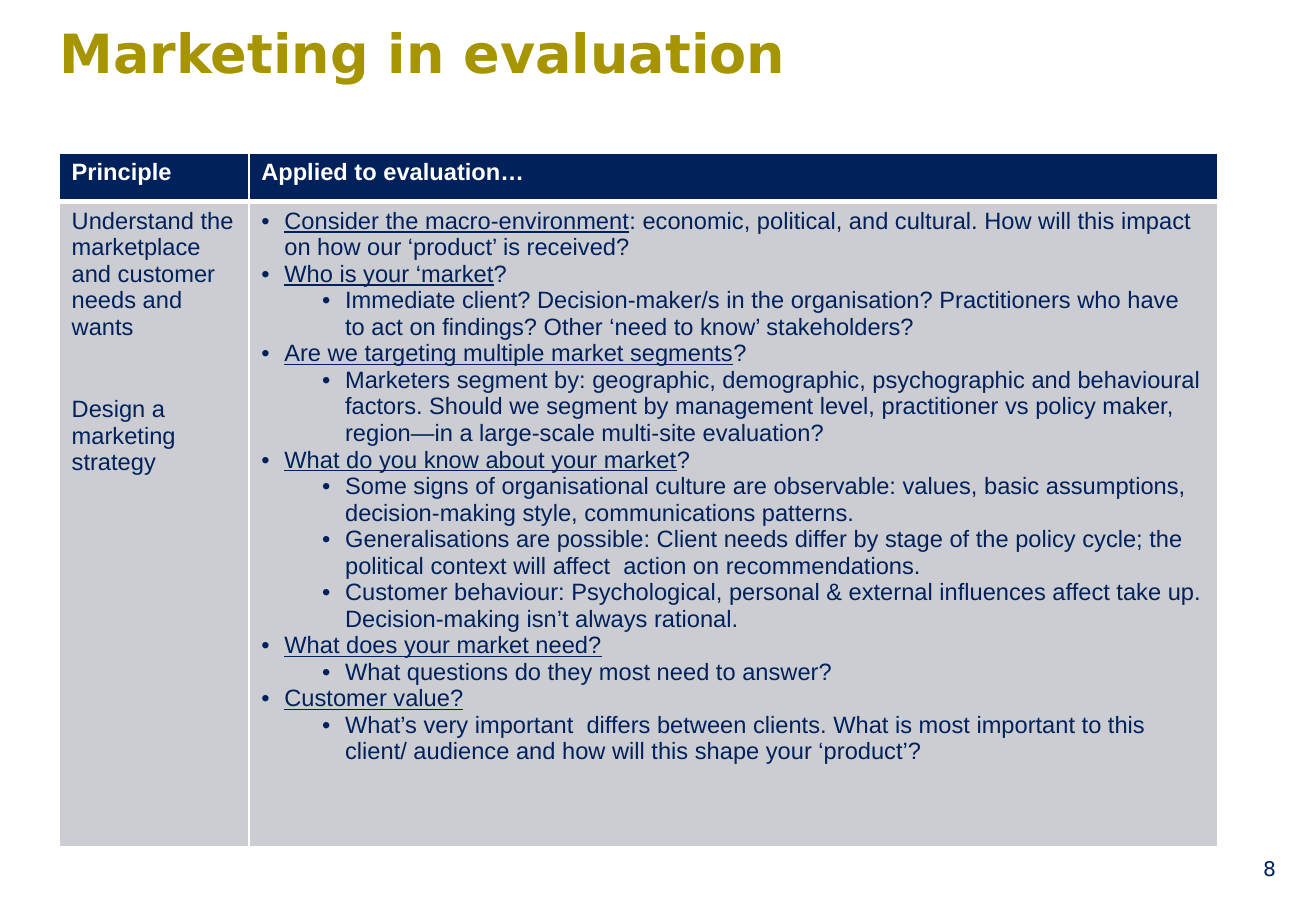
"""Build the slide on applying marketing principles to evaluation."""
import pptx
import pptx.dml.color
import pptx.enum.text
import pptx.oxml.ns
import pptx.util
from dataclasses import dataclass
from lxml import etree

Inches = pptx.util.Inches
Pt = pptx.util.Pt


@dataclass(frozen=True)
class Theme:
    gold: str = "A69500"
    navy: str = "00215B"
    gray: str = "CCCDD2"
    white: str = "FFFFFF"
    heading_font: str = "DejaVu Sans"
    body_font: str = "Arial"
    title_size: int = 32
    table_size: int = 14
    number_size: int = 12


theme = Theme()


def add_run(paragraph, text, font, size, color, bold=False, underline=False):
    run = paragraph.add_run()
    run.text = text
    run.font.name = font
    run.font.size = Pt(size)
    run.font.bold = bold
    run.font.underline = underline
    run.font.color.rgb = pptx.dml.color.RGBColor.from_string(color)


def style_cell(cell, fill, top, bottom):
    cell.fill.solid()
    cell.fill.fore_color.rgb = pptx.dml.color.RGBColor.from_string(fill)
    properties = cell._tc.get_or_add_tcPr()
    edges = [("a:lnL", 1), ("a:lnR", 1), ("a:lnT", top), ("a:lnB", bottom)]
    for position, (tag, width) in enumerate(edges):
        line = etree.Element(pptx.oxml.ns.qn(tag), w=str(Pt(width)))
        solid = etree.SubElement(line, pptx.oxml.ns.qn("a:solidFill"))
        etree.SubElement(solid, pptx.oxml.ns.qn("a:srgbClr"), val=theme.white)
        properties.insert(position, line)


presentation = pptx.Presentation()
presentation.slide_width = Inches(10.83)
presentation.slide_height = Inches(7.5)
slide = presentation.slides.add_slide(presentation.slide_layouts[6])

title = slide.shapes.add_textbox(Inches(0.49), Inches(0.16), Inches(9.38), Inches(1.01))
title_frame = title.text_frame
title_frame.word_wrap = True
title_frame.margin_left = title_frame.margin_right = 0
title_frame.margin_top = title_frame.margin_bottom = 0
add_run(title_frame.paragraphs[0], "Marketing in evaluation", theme.heading_font,
        theme.title_size, theme.gold, bold=True)

table = slide.shapes.add_table(2, 2, Inches(0.49), Inches(1.26), Inches(9.53), Inches(5.71)).table
for column, width in zip(table.columns, (1.56, 7.97)):
    column.width = Inches(width)
for row, height in zip(table.rows, (0.4, 5.31)):
    row.height = Inches(height)

for index, heading in enumerate(("Principle", "Applied to evaluation…")):
    style_cell(table.cell(0, index), theme.navy, 1, 3)
    style_cell(table.cell(1, index), theme.gray, 3, 1)
    add_run(table.cell(0, index).text_frame.paragraphs[0], heading, theme.body_font,
            theme.table_size, theme.white, bold=True)

principles = table.cell(1, 0).text_frame
add_run(principles.paragraphs[0], "Understand the marketplace and customer needs and wants",
        theme.body_font, theme.table_size, theme.navy)
strategy = principles.add_paragraph()
strategy.space_before = Pt(33)
add_run(strategy, "Design a marketing strategy", theme.body_font, theme.table_size, theme.navy)

applications = [
    (0, "Consider the macro-environment",
     ": economic, political, and cultural. How will this impact on how our ‘product’ is received?"),
    (0, "Who is your ‘market", "?"),
    (1, "", "Immediate client? Decision-maker/s in the organisation? Practitioners who have "
     "to act on findings? Other ‘need to know’ stakeholders?"),
    (0, "Are we targeting multiple market segments", "?"),
    (1, "", "Marketers segment by: geographic, demographic, psychographic and behavioural factors. "
     "Should we segment by management level, practitioner vs policy maker, "
     "region—in a large-scale multi-site evaluation?"),
    (0, "What do you know about your market", "?"),
    (1, "", "Some signs of organisational culture are observable: values, basic assumptions, "
     "decision-making style, communications patterns."),
    (1, "", "Generalisations are possible: Client needs differ by stage of the policy cycle; "
     "the political context will affect  action on recommendations."),
    (1, "", "Customer behaviour: Psychological, personal & external influences affect take up. "
     "Decision-making isn’t always rational."),
    (0, "What does your market need?", ""),
    (1, "", "What questions do they most need to answer?"),
    (0, "Customer value?", ""),
    (1, "", "What’s very important  differs between clients. What is most important to this "
     "client/ audience and how will this shape your ‘product’?"),
]
application_frame = table.cell(1, 1).text_frame
for index, (level, question, detail) in enumerate(applications):
    paragraph = application_frame.add_paragraph() if index else application_frame.paragraphs[0]
    paragraph.level = level
    properties = paragraph._p.get_or_add_pPr()
    properties.set("marL", str(Inches(0.19 + 0.5 * level)))
    properties.set("indent", str(Inches(-0.19)))
    etree.SubElement(properties, pptx.oxml.ns.qn("a:buFont"), typeface=theme.body_font)
    etree.SubElement(properties, pptx.oxml.ns.qn("a:buChar"), char="•")
    for text, underline in ((question, True), (detail, False)):
        if text:
            add_run(paragraph, text, theme.body_font, theme.table_size, theme.navy,
                    underline=underline)

number = slide.shapes.add_textbox(Inches(8.07), Inches(6.95), Inches(2.53), Inches(0.4))
number.text_frame.word_wrap = True
number.text_frame.vertical_anchor = pptx.enum.text.MSO_ANCHOR.MIDDLE
number_paragraph = number.text_frame.paragraphs[0]
number_paragraph.alignment = pptx.enum.text.PP_ALIGN.RIGHT
add_run(number_paragraph, "8", theme.heading_font, theme.number_size, theme.navy)

presentation.save("out.pptx")
